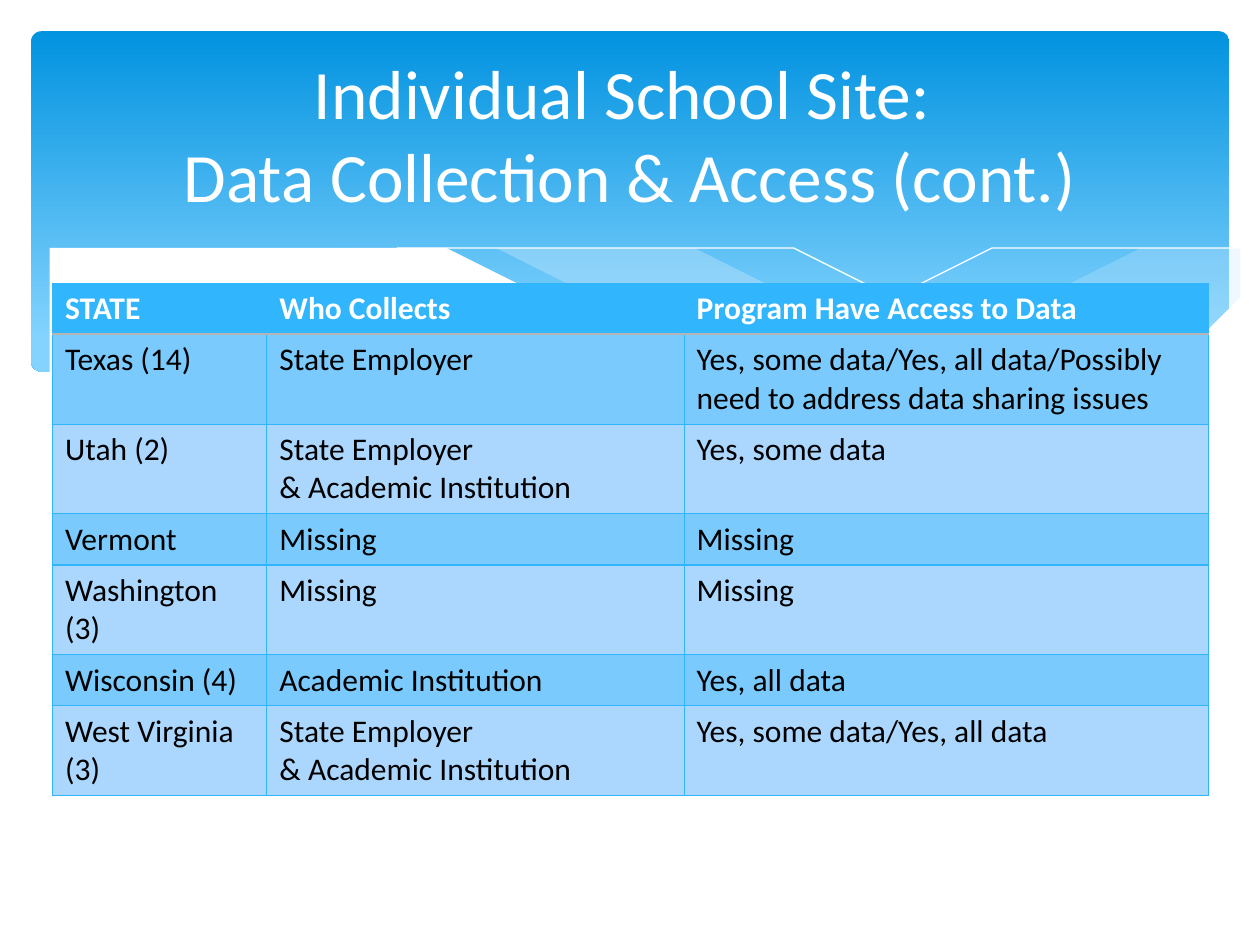
import lxml.etree
import pptx
import pptx.dml.color
import pptx.enum.shapes
import pptx.enum.text
import pptx.oxml.ns
import pptx.util

Cm = pptx.util.Cm
Pt = pptx.util.Pt
RGBColor = pptx.dml.color.RGBColor
qn = pptx.oxml.ns.qn

WHITE = RGBColor(0xFF, 0xFF, 0xFF)
BLACK = RGBColor(0x00, 0x00, 0x00)
BANNER_TOP = RGBColor(0x02, 0x93, 0xE0)
BANNER_BOTTOM = RGBColor(0x83, 0xD3, 0xFE)
VEIL = RGBColor(0xC6, 0xE7, 0xFC)
HEADER_BLUE = RGBColor(0x31, 0xB6, 0xFD)
BAND_DARK = RGBColor(0x7A, 0xCA, 0xFE)
BAND_LIGHT = RGBColor(0xAB, 0xD7, 0xFF)
HEADER_RULE = RGBColor(0xB4, 0xB4, 0xB4)

RIGHT_VEIL = [
    (24.79, 5.08), (23.75, 5.26), (22.63, 5.49), (21.13, 5.84), (19.13, 6.3),
    (16.79, 6.73), (17.91, 6.88), (19.23, 7.01), (20.68, 7.06), (22.15, 6.96),
    (23.39, 6.73), (24.1, 6.53), (24.79, 6.27),
]
MIDDLE_VEIL = [
    (22.68, 6.93), (21.26, 6.73), (19.69, 6.45), (17.93, 6.1), (15.98, 5.64),
    (14.45, 5.28), (13.06, 5.03), (11.81, 4.85), (10.67, 4.75), (9.17, 4.7),
    (7.95, 4.78), (7.26, 4.85), (8.69, 5.05), (10.26, 5.36), (12.47, 5.89),
    (14.38, 6.3), (16.1, 6.63), (17.65, 6.86), (19.33, 7.04), (20.78, 7.06),
    (22.02, 7.01),
]
LONG_CREST = [
    (7.85, 4.95), (8.74, 4.83), (9.83, 4.75), (11, 4.75), (12.42, 4.83),
    (14.12, 5), (16.15, 5.28), (17.65, 5.56), (19.3, 5.92), (21.11, 6.38),
    (23.04, 6.91),
]
SHORT_CREST = [
    (15.57, 6.53), (17.65, 5.97), (19.71, 5.49), (21.23, 5.18), (22.73, 4.93),
    (23.83, 4.78), (24.77, 4.7),
]
WHITE_WAVE = [
    (24.82, 6.25), (23.88, 6.58), (22.83, 6.83), (21.59, 6.99), (20.55, 7.04),
    (18.9, 6.96), (16.97, 6.73), (15.32, 6.45), (13.44, 6.07), (11.35, 5.59),
    (9.27, 5.13), (7.42, 4.83), (5.84, 4.7), (4.5, 4.67), (3.35, 4.72),
    (2.41, 4.85), (1.5, 5.05), (0.58, 5.41), (0.58, 8.36), (24.82, 8.36),
]

STATES = [
    ("STATE", "Who Collects", "Program Have Access to Data"),
    ("Texas (14)", "State Employer",
     "Yes, some data/Yes, all data/Possibly need to address data sharing issues"),
    ("Utah (2)", "State Employer\n& Academic Institution", "Yes, some data"),
    ("Vermont", "Missing", "Missing"),
    ("Washington (3)", "Missing", "Missing"),
    ("Wisconsin (4)", "Academic Institution", "Yes, all data"),
    ("West Virginia (3)", "State Employer\n& Academic Institution",
     "Yes, some data/Yes, all data"),
]
COLUMN_WIDTHS = [4.32, 8.41, 10.57]
ONE_LINE, TWO_LINES = 1.03, 1.81
ROW_HEIGHTS = [ONE_LINE, TWO_LINES, TWO_LINES, ONE_LINE, TWO_LINES, ONE_LINE, TWO_LINES]


def write_text(frame, text, size, color, bold=False, align=pptx.enum.text.PP_ALIGN.LEFT):
    frame.word_wrap = True
    frame.text = text
    for paragraph in frame.paragraphs:
        paragraph.alignment = align
        for run in paragraph.runs:
            run.font.name = "Calibri"
            run.font.size = Pt(size)
            run.font.bold = bold
            run.font.color.rgb = color


def add_banner(slide):
    banner = slide.shapes.add_shape(
        pptx.enum.shapes.MSO_SHAPE.ROUNDED_RECTANGLE,
        Cm(0.63), Cm(0.63), Cm(24.15), Cm(6.86))
    banner.adjustments[0] = 0.03
    banner.shadow.inherit = False
    banner.line.fill.background()
    banner.fill.gradient()
    banner.fill.gradient_angle = 270
    top, bottom = banner.fill.gradient_stops
    top.color.rgb, top.position = BANNER_TOP, 0
    bottom.color.rgb, bottom.position = BANNER_BOTTOM, 0.9


def add_outline(slide, points, closed):
    builder = slide.shapes.build_freeform(*points[0], scale=Cm(1))
    builder.add_line_segments(points[1:], close=closed)
    outline = builder.convert_to_shape()
    outline.shadow.inherit = False
    return outline


def add_wave(slide, points, color, opacity=100):
    wave = add_outline(slide, points, closed=True)
    wave.line.fill.background()
    wave.fill.solid()
    wave.fill.fore_color.rgb = color
    if opacity < 100:
        tint = wave.fill._xPr.find(qn("a:solidFill"))[0]
        lxml.etree.SubElement(tint, qn("a:alpha"), val=str(opacity * 1000))


def add_crest(slide, points):
    crest = add_outline(slide, points, closed=False)
    crest.fill.background()
    crest.line.color.rgb = WHITE
    crest.line.width = Pt(0)


def set_border(cell, position, side, color, width):
    border = lxml.etree.Element(qn(f"a:ln{side}"), w=str(Pt(width)))
    fill = lxml.etree.SubElement(border, qn("a:solidFill"))
    lxml.etree.SubElement(fill, qn("a:srgbClr"), val=str(color))
    cell._tc.get_or_add_tcPr().insert(position, border)


def format_cell(cell, text, row):
    is_header = row == 0
    write_text(cell.text_frame, text, size=18, bold=is_header,
               color=WHITE if is_header else BLACK)
    cell.fill.solid()
    band = BAND_DARK if row % 2 else BAND_LIGHT
    cell.fill.fore_color.rgb = HEADER_BLUE if is_header else band
    borders = {side: (HEADER_BLUE, 0.75) for side in "LRTB"}
    if is_header:
        borders["B"] = (HEADER_RULE, 1.25)
    elif row == 1:
        borders["T"] = (HEADER_RULE, 1.25)
    for position, (side, (color, width)) in enumerate(borders.items()):
        set_border(cell, position, side, color, width)


def add_state_table(slide):
    table = slide.shapes.add_table(
        len(STATES), len(COLUMN_WIDTHS), Cm(1.06), Cm(5.71),
        Cm(sum(COLUMN_WIDTHS)), Cm(sum(ROW_HEIGHTS))).table
    for column, width in zip(table.columns, COLUMN_WIDTHS):
        column.width = Cm(width)
    for row, (state, height) in enumerate(zip(STATES, ROW_HEIGHTS)):
        table.rows[row].height = Cm(height)
        for column, text in enumerate(state):
            format_cell(table.cell(row, column), text, row)


def add_title(slide):
    title = slide.shapes.add_textbox(Cm(1.27), Cm(0.94), Cm(22.86), Cm(3.48))
    title.text_frame.vertical_anchor = pptx.enum.text.MSO_ANCHOR.MIDDLE
    write_text(title.text_frame,
               "Individual School Site: \vData Collection & Access (cont.)",
               size=39.6, color=WHITE, align=pptx.enum.text.PP_ALIGN.CENTER)


def main():
    deck = pptx.Presentation()
    deck.slide_width, deck.slide_height = Cm(25.4), Cm(19.05)
    slide = deck.slides.add_slide(deck.slide_layouts[6])
    add_banner(slide)
    add_wave(slide, RIGHT_VEIL, VEIL, opacity=29)
    add_wave(slide, MIDDLE_VEIL, VEIL, opacity=40)
    add_crest(slide, LONG_CREST)
    add_crest(slide, SHORT_CREST)
    add_wave(slide, WHITE_WAVE, WHITE)
    add_state_table(slide)
    add_title(slide)
    deck.save("out.pptx")


if __name__ == "__main__":
    main()
